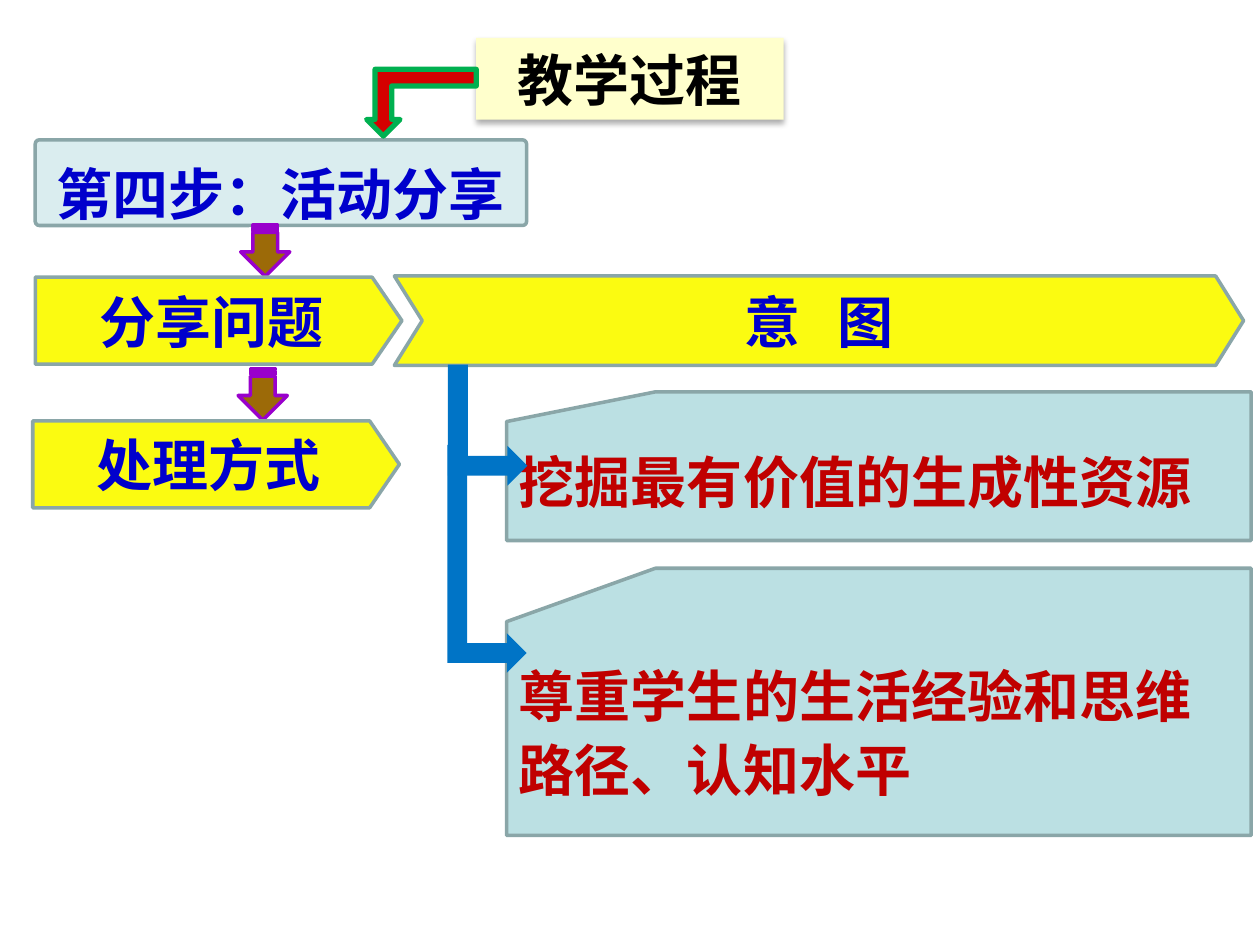
"""Build the teaching process slide: step four, activity sharing."""
from lxml import etree
from pptx import Presentation
from pptx.dml.color import RGBColor
from pptx.enum.shapes import MSO_SHAPE
from pptx.enum.text import MSO_ANCHOR, PP_ALIGN
from pptx.oxml.ns import qn
from pptx.util import Pt

RECTANGLE, ROUNDED = MSO_SHAPE.RECTANGLE, MSO_SHAPE.ROUNDED_RECTANGLE
PENTAGON, CHEVRON = MSO_SHAPE.PENTAGON, MSO_SHAPE.CHEVRON
CARD = MSO_SHAPE.FLOWCHART_CARD
BENT, STRIPED = MSO_SHAPE.BENT_UP_ARROW, MSO_SHAPE.STRIPED_RIGHT_ARROW
CENTER, LEFT, MIDDLE = PP_ALIGN.CENTER, PP_ALIGN.LEFT, MSO_ANCHOR.MIDDLE
SANS_SC, SANS_JP = "Noto Sans CJK SC", "Noto Sans CJK JP"
COLORS = {
    "cream": "FFFFCC", "mist": "DAEDEF", "yellow": "FBFB11", "teal": "BBE0E3",
    "outline": "8AA6A8", "black": "000000", "navy": "0000CC", "crimson": "C00000",
    "red": "D50000", "green": "00B050", "brown": "996600", "purple": "9900CC",
    "blue": "0074C6",
}


def add_box(kind, frame, fill, line=None, weight=2, adjust=None, rotation=0):
    box = page.shapes.add_shape(kind, *(Pt(length) for length in frame))
    box.shadow.inherit = False
    box.rotation = rotation
    box.fill.solid()
    box.fill.fore_color.rgb = RGBColor.from_string(COLORS[fill])
    if line:
        box.line.color.rgb = RGBColor.from_string(COLORS[line])
        box.line.width = Pt(weight)
    else:
        box.line.fill.background()
    if adjust is not None:
        box.adjustments[0] = adjust
    return box


def write(box, text, color, face, align=CENTER, spacing=1.0, tracking=0):
    frame = box.text_frame
    frame.word_wrap = True
    frame.vertical_anchor = MIDDLE
    para = frame.paragraphs[0]
    para.alignment = align
    para.line_spacing = spacing
    span = para.add_run()
    span.text = text
    for name, value in {"name": face, "size": Pt(32), "bold": True}.items():
        setattr(span.font, name, value)
    span.font.color.rgb = RGBColor.from_string(COLORS[color])
    properties = span.font._element
    east_asian = etree.Element(qn("a:ea"), typeface=face)
    properties.find(qn("a:latin")).addnext(east_asian)
    if tracking:
        properties.set("spc", str(tracking * 100))


deck = Presentation()
deck.slide_width, deck.slide_height = Pt(720), Pt(540)
page = deck.slides.add_slide(deck.slide_layouts[6])

title = add_box(RECTANGLE, (272.16, 21.6, 175.68, 46.8), "cream")
write(title, "教学过程", "black", SANS_SC)
effects = title._element.spPr.find(qn("a:effectLst"))
shadow = etree.SubElement(effects, qn("a:outerShdw"), blurRad=str(Pt(3.5)),
                          dist=str(Pt(2.2)), dir="5400000", rotWithShape="0")
shade = etree.SubElement(shadow, qn("a:srgbClr"), val=COLORS["black"])
etree.SubElement(shade, qn("a:alpha"), val="32000")

step = add_box(ROUNDED, (20.16, 79.92, 280.8, 48.96), "mist", "outline", adjust=0.047)
write(step, "第四步：活动分享", "navy", SANS_JP, spacing=1.3)
add_box(BENT, (209.52, 39.6, 62.64, 38.16), "red", "green", 3, rotation=180)

for text, left, top in (("分享问题", 20.16, 158.4), ("处理方式", 18.72, 240.48)):
    arrow = add_box(STRIPED, (left + 116.64, top - 29.2, 29.52, 28.08),
                    "brown", "purple", rotation=90)
    tint = arrow._element.spPr.find(qn("a:solidFill"))[0]
    etree.SubElement(tint, qn("a:alpha"), val="97000")
    stage = add_box(PENTAGON, (left, top, 209.52, 49.68), "yellow", "outline", adjust=0.342)
    write(stage, text, "navy", SANS_JP)

intent = add_box(CHEVRON, (225.36, 157.68, 485.28, 51.12), "yellow", "outline", adjust=0.312)
write(intent, "意 图", "navy", SANS_JP, tracking=7)

for text, top, height, spacing in (
    ("尊重学生的生活经验和思维路径、认知水平", 324.72, 152.64, 1.1),
    ("挖掘最有价值的生成性资源", 223.92, 84.96, 1.0),
):
    card = add_box(CARD, (289.44, top, 425.52, height), "teal", "outline")
    write(card, text, "crimson", SANS_SC, LEFT, spacing)

for left, top, length in ((244.08, 220.32, 69.12), (213.12, 296.64, 130.32)):
    add_box(BENT, (left, top, length, 45.36), "blue", rotation=90)

deck.save("out.pptx")
